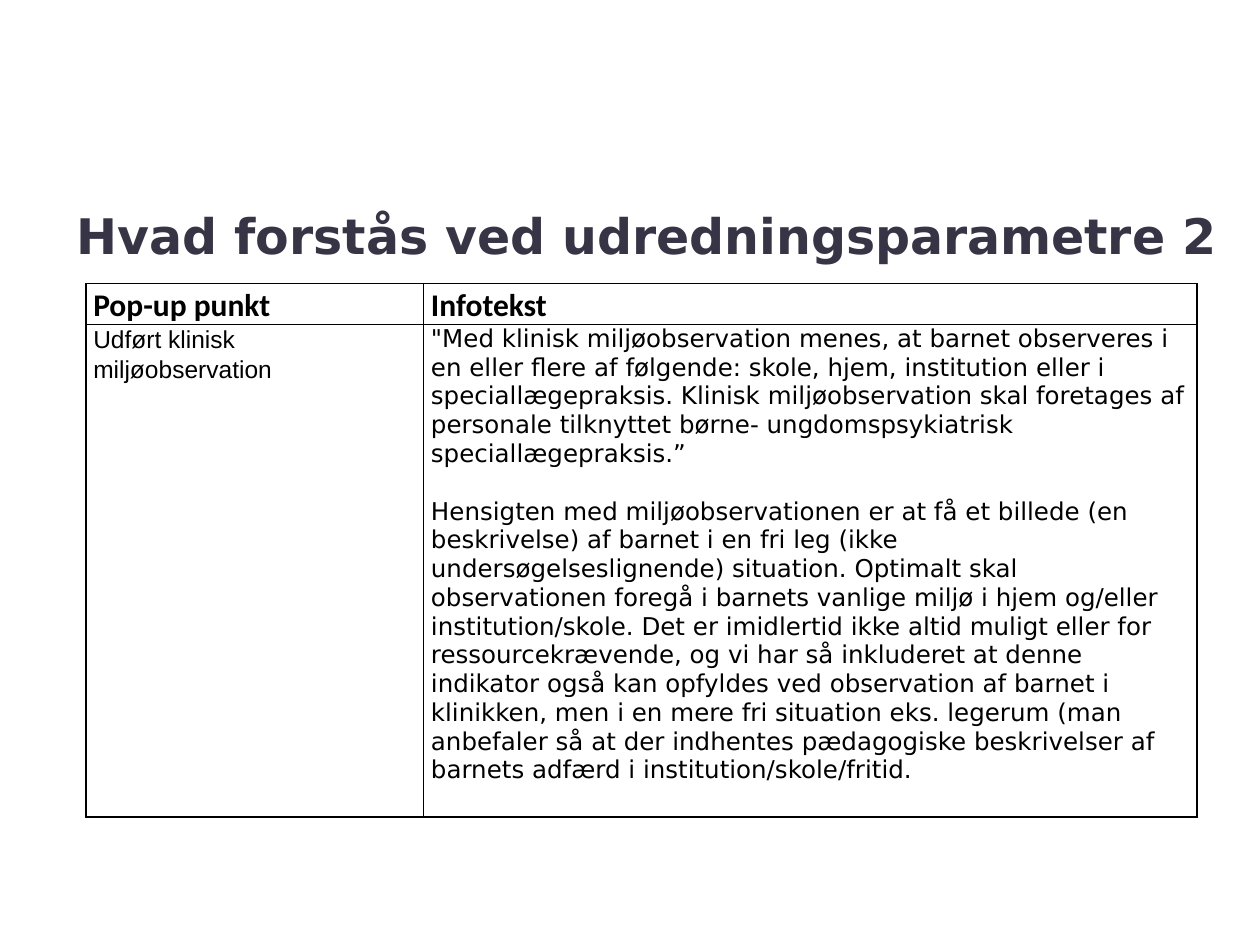
from lxml import etree
from pptx import Presentation
from pptx.dml.color import RGBColor
from pptx.enum.text import MSO_ANCHOR
from pptx.oxml.ns import qn
from pptx.util import Pt

MIDDLE = MSO_ANCHOR.MIDDLE
INK = RGBColor(0x37, 0x35, 0x45)
BLACK = RGBColor(0, 0, 0)

TITLE = dict(name="DejaVu Sans", size=Pt(28), bold=True)
HEADER = dict(name="Calibri", size=Pt(18), bold=True)
TOPIC = dict(name="Arial", size=Pt(14), bold=False)
INFO = dict(name="DejaVu Sans", size=Pt(14), bold=False)

INFO_TEXT = [
    "\"Med klinisk miljøobservation menes, at barnet observeres i en eller flere af følgende: "
    "skole, hjem, institution eller i speciallægepraksis. Klinisk miljøobservation skal foretages "
    "af personale tilknyttet børne- ungdomspsykiatrisk speciallægepraksis.”",
    "Hensigten med miljøobservationen er at få et billede (en beskrivelse) af barnet i en fri leg "
    "(ikke undersøgelseslignende) situation. Optimalt skal observationen foregå i barnets vanlige "
    "miljø i hjem og/eller institution/skole. Det er imidlertid ikke altid muligt eller for "
    "ressourcekrævende, og vi har så inkluderet at denne indikator også kan opfyldes ved "
    "observation af barnet i klinikken, men i en mere fri situation eks. legerum (man anbefaler "
    "så at der indhentes pædagogiske beskrivelser af barnets adfærd i institution/skole/fritid.",
]

ROWS = [
    [(["Pop-up punkt"], HEADER, 1.07), (["Infotekst"], HEADER, 1.07)],
    [(["Udført klinisk miljøobservation"], TOPIC, 1.07), (INFO_TEXT, INFO, 1.0)],
]


def write(tf, paragraphs, fmt, color, spacing=1.0, gap=Pt(16.5)):
    """Fill a text frame with equally formatted paragraphs."""
    for i, text in enumerate(paragraphs):
        p = tf.add_paragraph() if i else tf.paragraphs[0]
        p.line_spacing = spacing
        if i:
            p.space_before = gap
        r = p.add_run()
        r.text = text
        for key, value in fmt.items():
            setattr(r.font, key, value)
        r.font.color.rgb = color


def add_borders(cell, color, width):
    """Draw a solid line on all four sides of a cell."""
    tc_pr = cell._tc.get_or_add_tcPr()
    for side in ("lnL", "lnR", "lnT", "lnB"):
        ln = etree.SubElement(tc_pr, qn(f"a:{side}"), w=str(width))
        fill = etree.SubElement(ln, qn("a:solidFill"))
        etree.SubElement(fill, qn("a:srgbClr"), val=str(color))


def add_title(s, left, top, width, height):
    """Place the slide title in its box."""
    tf = s.shapes.add_textbox(left, top, width, height).text_frame
    tf.word_wrap = True
    tf.vertical_anchor = MIDDLE
    write(tf, ["Hvad forstås ved udredningsparametre 2"], TITLE, INK)


def add_info_table(s, left, top, width, height):
    """Place the bordered table of parameters and their explanations."""
    table = s.shapes.add_table(len(ROWS), 2, left, top, width, height).table
    table.first_row = table.horz_banding = False
    table.columns[0].width = Pt(193)
    table.columns[1].width = width - Pt(193)
    table.rows[0].height = Pt(23.4)
    table.rows[1].height = height - Pt(23.4)
    margins = dict(margin_left=Pt(4.3), margin_right=Pt(4.3), margin_top=0, margin_bottom=0)
    for i, row in enumerate(ROWS):
        for j, (paragraphs, fmt, spacing) in enumerate(row):
            cell = table.cell(i, j)
            for key, value in margins.items():
                setattr(cell, key, value)
            add_borders(cell, BLACK, Pt(1))
            cell.fill.background()
            write(cell.text_frame, paragraphs, fmt, BLACK, spacing)


def main():
    """Build the slide and save it."""
    prs = Presentation()
    prs.slide_width, prs.slide_height = Pt(720), Pt(540)
    s = prs.slides.add_slide(prs.slide_layouts[6])
    add_title(s, Pt(36.7), Pt(111.6), Pt(692), Pt(45.4))
    add_info_table(s, Pt(49), Pt(162), Pt(635), Pt(305))
    prs.save("out.pptx")


if __name__ == "__main__":
    main()
